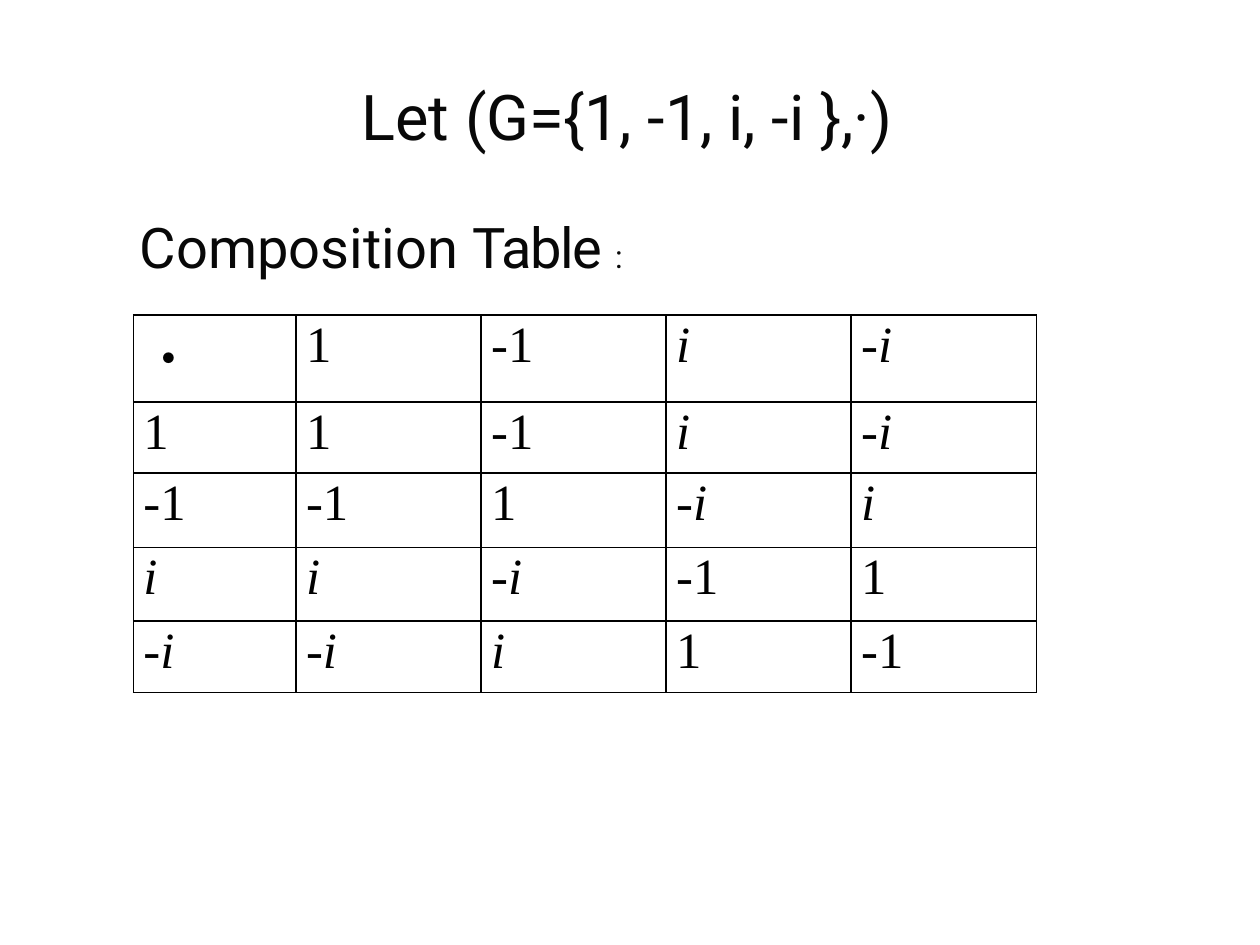
"""Build a slide with the composition table of the group {1, -1, i, -i}."""
import pptx
import pptx.dml.color
import pptx.oxml
import pptx.oxml.ns
import pptx.util
import lxml.etree

Cm = pptx.util.Cm
Pt = pptx.util.Pt
INK = pptx.dml.color.RGBColor(0x08, 0x08, 0x08)
BLACK = pptx.dml.color.RGBColor(0x00, 0x00, 0x00)

ELEMENTS = ["1", "-1", "i", "-i"]
PRODUCTS = [
    ["1", "-1", "i", "-i"],
    ["-1", "1", "-i", "i"],
    ["i", "-i", "-1", "1"],
    ["-i", "i", "1", "-1"],
]
GRID = [["·"] + ELEMENTS] + [[name] + row for name, row in zip(ELEMENTS, PRODUCTS)]
COLUMN_WIDTHS = [3.28] + [3.73] * 4
ROW_HEIGHTS = [1.75, 1.44, 1.5, 1.48, 1.44]

HEADINGS = [
    (7.26, 1.5, 11.68, 1.6, [("Let ", 36, 0), ("(G={1, ", 36, -0.1), ("-1, i, -i },·)", 36, 0)]),
    (2.79, 4.22, 9.8, 1.42, [("Composition ", 32, 0), ("Table ", 32, -0.8), (":", 18, 0)]),
]


def add_span(para, text, font_name, size, color):
    span = para.add_run()
    span.text = text
    span.font.name = font_name
    span.font.size = Pt(size)
    span.font.color.rgb = color
    return span


def add_border(cell, side, width):
    properties = cell._tc.get_or_add_tcPr()
    line = lxml.etree.SubElement(properties, pptx.oxml.ns.qn(f"a:ln{side}"), w=str(Pt(width)))
    fill = lxml.etree.SubElement(line, pptx.oxml.ns.qn("a:solidFill"))
    lxml.etree.SubElement(fill, pptx.oxml.ns.qn("a:srgbClr"), val=str(BLACK))


deck = pptx.Presentation()
deck.slide_width = Cm(25.4)
deck.slide_height = Cm(19.05)
page = deck.slides.add_slide(deck.slide_layouts[6])

for left, top, width, height, pieces in HEADINGS:
    box = page.shapes.add_textbox(Cm(left), Cm(top), Cm(width), Cm(height))
    frame = box.text_frame
    frame.word_wrap = True
    frame.margin_left = Cm(0.03)
    frame.margin_top = Cm(0.06)
    frame.margin_right = frame.margin_bottom = 0
    for text, size, spacing in pieces:
        span = add_span(frame.paragraphs[0], text, "Roboto", size, INK)
        span._r.get_or_add_rPr().set("spc", str(round(spacing * 100)))

table = page.shapes.add_table(
    len(GRID), len(GRID[0]), Cm(2.69), Cm(6.35), Cm(sum(COLUMN_WIDTHS)), Cm(sum(ROW_HEIGHTS))
).table
table.first_row = False
table.horz_banding = False
for column, width in zip(table.columns, COLUMN_WIDTHS):
    column.width = Cm(width)
for row, height in zip(table.rows, ROW_HEIGHTS):
    row.height = Cm(height)

last = len(GRID) - 1
for r, values in enumerate(GRID):
    for c, value in enumerate(values):
        cell = table.cell(r, c)
        cell.margin_left = Cm(0.2)
        cell.margin_right = cell.margin_top = cell.margin_bottom = 0
        for side, outer in (("L", c == 0), ("R", c == last), ("T", r == 0), ("B", r == last)):
            add_border(cell, side, 0.75 if outer else 1)
        cell.fill.background()
        para = cell.text_frame.paragraphs[0]
        if value == "·":
            cell.margin_top = Cm(0.06)
            add_span(para, value, "Noto Sans CJK SC", 29, BLACK)
            continue
        para.line_spacing = Pt(33.3)
        pieces = ["-", "i"] if value == "-i" else [value]
        for text in pieces:
            span = add_span(para, text, "Times New Roman", 29, BLACK)
            span.font.italic = text == "i"

deck.save("out.pptx")
